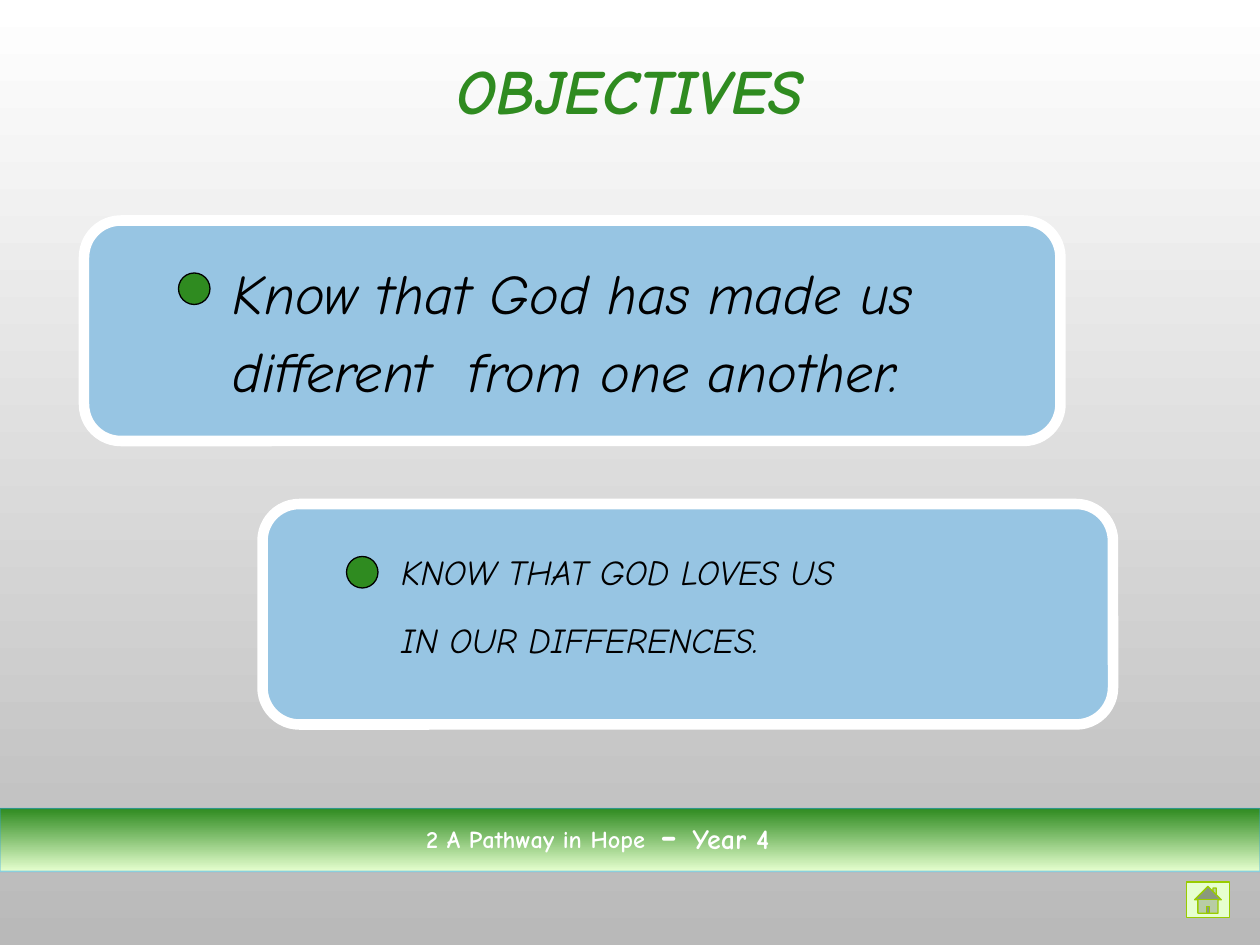
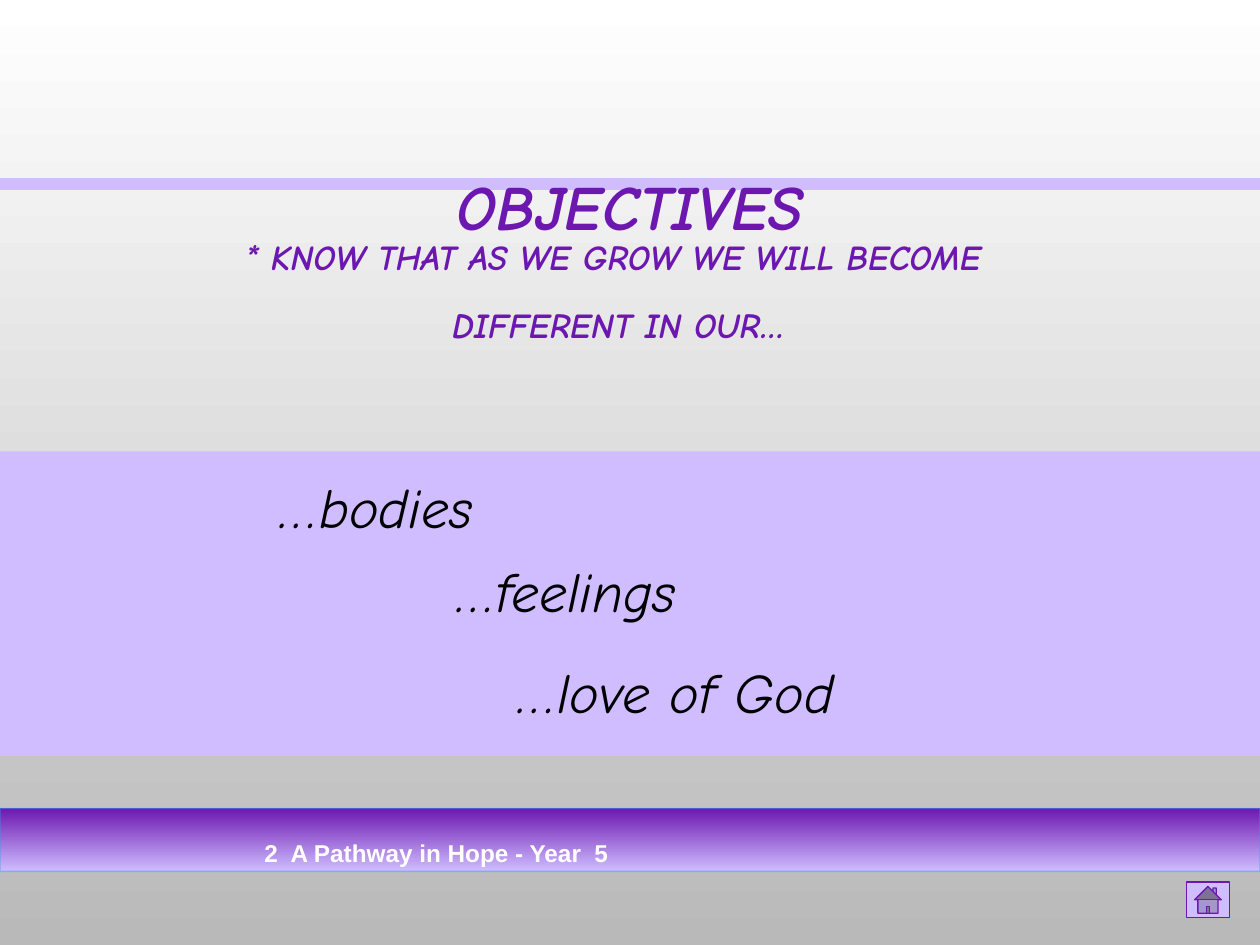
from collections import namedtuple

from lxml import etree
from pptx import Presentation
from pptx.dml.color import RGBColor
from pptx.enum.shapes import MSO_SHAPE
from pptx.enum.text import MSO_ANCHOR, MSO_AUTO_SIZE, PP_ALIGN
from pptx.oxml.ns import qn
from pptx.util import Inches, Pt

RECTANGLE, ROUNDED = MSO_SHAPE.RECTANGLE, MSO_SHAPE.ROUNDED_RECTANGLE
OVAL, HOME = MSO_SHAPE.OVAL, MSO_SHAPE.ACTION_BUTTON_HOME
TOP, MIDDLE = MSO_ANCHOR.TOP, MSO_ANCHOR.MIDDLE
LEFT, CENTER = PP_ALIGN.LEFT, PP_ALIGN.CENTER
FIXED, GROW = MSO_AUTO_SIZE.NONE, MSO_AUTO_SIZE.SHAPE_TO_FIT_TEXT

WIDTH, HEIGHT = Inches(10), Inches(7.5)
COLUMNS, ROWS = 120, 90
COLORS = {
    "white": "FFFFFF", "grey": "B9B9B9", "black": "000000",
    "card": "97C5E3", "edge": "2FA3EE",
    "green": "2F8B20", "pale green": "E6FFCF", "lime": "99CC00",
    "purple": "6C18B0", "lilac": "CFBDFF",
}
COMIC = "Comic Neue"
HEADING = {"name": COMIC, "size": Pt(36), "bold": True, "italic": True}
SPEECH = {"name": COMIC, "size": Pt(32), "italic": True}
CAPITALS = {"name": COMIC, "size": Pt(20), "italic": True}
FOOTER = {"name": COMIC, "size": Pt(24), "bold": True}
RAISED = 2000

Box = namedtuple("Box", "column row columns rows")
TITLE_BOX = Box(6, 3, 108, 12)
FOOTER_BOX = Box(0, 77, 120, 6)
HOME_BOX = Box(113, 84, 4.1, 3.4)


def color(name):
    """Return the named colour."""
    return RGBColor.from_string(COLORS[name])


def measure(box):
    """Turn a grid box into left, top, width and height."""
    across, down = WIDTH / COLUMNS, HEIGHT / ROWS
    return [round(value) for value in (
        box.column * across, box.row * down, box.columns * across, box.rows * down)]


def set_values(target, values):
    """Set every attribute named in a dict of format values."""
    for name, value in values.items():
        setattr(target, name, value)


def shade(fill, first, last):
    """Apply a top-to-bottom gradient."""
    fill.gradient()
    fill.gradient_angle = 270
    for stop, name in zip(fill.gradient_stops, (first, last)):
        stop.color.rgb = color(name)


def draw_shape(page, kind, box, fill=None, line=None, weight=0.75):
    """Draw a preset shape with a plain fill and outline."""
    shape = page.shapes.add_shape(kind, *measure(box))
    shape.shadow.inherit = False
    if fill:
        shape.fill.solid()
        shape.fill.fore_color.rgb = color(fill)
    if line:
        shape.line.color.rgb = color(line)
        shape.line.width = Pt(weight)
    else:
        shape.line.fill.background()
    return shape


def write_text(frame, lines, font, ink, hanging=0, gap=0, frame_format=None, **para_format):
    """Fill a frame with paragraphs, each a list of (text, baseline, changes) spans."""
    set_values(frame, {"word_wrap": True, "auto_size": FIXED, "vertical_anchor": TOP,
                       **(frame_format or {})})
    for index, spans in enumerate(lines):
        para = frame.paragraphs[0] if index == 0 else frame.add_paragraph()
        properties = para._p.get_or_add_pPr()
        properties.set("marL", str(Inches(hanging)))
        properties.set("indent", str(-Inches(hanging)))
        etree.SubElement(properties, qn("a:buNone"))
        set_values(para, {"alignment": LEFT, "space_before": Pt(gap if index else 0),
                          **para_format})
        for text, baseline, changes in spans:
            span = para.add_run()
            span.text = text
            set_values(span.font, {**font, **changes})
            span.font.color.rgb = color(ink)
            if baseline:
                span._r.get_or_add_rPr().set("baseline", str(baseline))


def plain(*texts):
    """Make one single-span paragraph of each text."""
    return [[(text, 0, {})] for text in texts]


def add_text(page, box, lines, font, ink, **options):
    """Add a text box."""
    frame = page.shapes.add_textbox(*measure(box)).text_frame
    write_text(frame, lines, font, ink, **options)


def fill_placeholder(page, index, box, lines, font, ink, **options):
    """Bring a placeholder to the front, then move and fill it."""
    holder = page.placeholders[index]
    page.shapes._spTree.append(holder._element)
    set_values(holder, dict(zip(("left", "top", "width", "height"), measure(box))))
    write_text(holder.text_frame, lines, font, ink, **options)


def draw_footer(page, dark, pale, outline, text_box, spans, font, wrap):
    """Draw the footer band with its words and the home button."""
    band = draw_shape(page, RECTANGLE, FOOTER_BOX, line="edge")
    shade(band.fill, dark, pale)
    edge = band.line._ln.find(".//" + qn("a:srgbClr"))
    etree.SubElement(edge, qn("a:alpha")).set("val", "50000")
    add_text(page, text_box, [spans], font, "white",
             frame_format={"word_wrap": wrap, "auto_size": GROW})
    draw_shape(page, HOME, HOME_BOX, pale, outline)


def draw_card(page, box, dot_column):
    """Draw a rounded card with a dot and return the box for its text."""
    card = draw_shape(page, ROUNDED, box, "card", "white", 6)
    card.adjustments[0] = 0.167
    dot = Box(box.column + dot_column, box.row + 5, 3, 3)
    draw_shape(page, OVAL, dot, "green", "black")
    return Box(dot.column + 4, box.row + 3, box.columns - 10, 17)


def build_cards_slide(page):
    """Build the green slide with two objective cards."""
    fill_placeholder(page, 0, TITLE_BOX, plain("OBJECTIVES"), HEADING, "green",
                     alignment=CENTER, line_spacing=0.9,
                     frame_format={"vertical_anchor": MIDDLE, "margin_left": 0,
                                   "margin_right": 0, "margin_top": 0, "margin_bottom": 0})
    made = draw_card(page, Box(8, 21, 93, 21), 9)
    add_text(page, made, plain("Know that God has made us", "different  from one another."),
             SPEECH, "black", hanging=0.38, gap=6.4)
    loved = draw_card(page, Box(25, 48, 81, 21), 8)
    fill_placeholder(page, 1, loved, plain("KNOW THAT GOD LOVES US", "IN OUR DIFFERENCES."),
                     CAPITALS, "black", hanging=0.25, gap=10, line_spacing=1.2)
    spans = [("2 A Pathway in Hope", RAISED, {}), (" - ", 0, {}),
             ("Year 4", 0, {"size": Pt(16)})]
    draw_footer(page, "green", "pale green", "lime", Box(39.4, 76.3, 43.3, 6),
                spans, FOOTER, False)


def build_growth_slide(page):
    """Build the purple slide with three steps on a wide band."""
    draw_shape(page, RECTANGLE, Box(0, 17, COLUMNS, 1), "lilac", "lilac")
    draw_shape(page, RECTANGLE, Box(0, 43, COLUMNS, 29), "lilac")
    fill_placeholder(page, 0, Box(9, 8.2, 102, 21), plain("OBJECTIVES"), HEADING, "purple",
                     alignment=CENTER, line_spacing=Pt(53),
                     frame_format={"vertical_anchor": MIDDLE})
    fill_placeholder(page, 1, Box(7, 21, 104, 18),
                     plain("* KNOW THAT AS WE GROW WE WILL BECOME ", "DIFFERENT IN OUR…"),
                     {**CAPITALS, "bold": True}, "purple", hanging=0.25, gap=10,
                     alignment=CENTER, line_spacing=1.2, frame_format={"word_wrap": False})
    draw_footer(page, "purple", "lilac", "purple", Box(24, 77.6, 75, 4.4),
                [("2  A Pathway in Hope - Year  5", RAISED, {})],
                {**FOOTER, "name": "Arial"}, True)
    steps = [("…bodies", 25.3, 44.4, 22), ("…feelings", 42.2, 52.4, 25.8),
             ("…love of God", 48, 62, 45)]
    for text, column, row, columns in steps:
        add_text(page, Box(column, row, columns, 7.6), plain(text), SPEECH, "black",
                 frame_format={"word_wrap": False, "auto_size": GROW})


def main():
    """Build and save the deck."""
    deck = Presentation()
    deck.slide_width, deck.slide_height = WIDTH, HEIGHT
    shade(deck.slide_master.background.fill, "white", "grey")
    for build in (build_cards_slide, build_growth_slide):
        build(deck.slides.add_slide(deck.slide_layouts[1]))
    deck.save("out.pptx")


if __name__ == "__main__":
    main()
